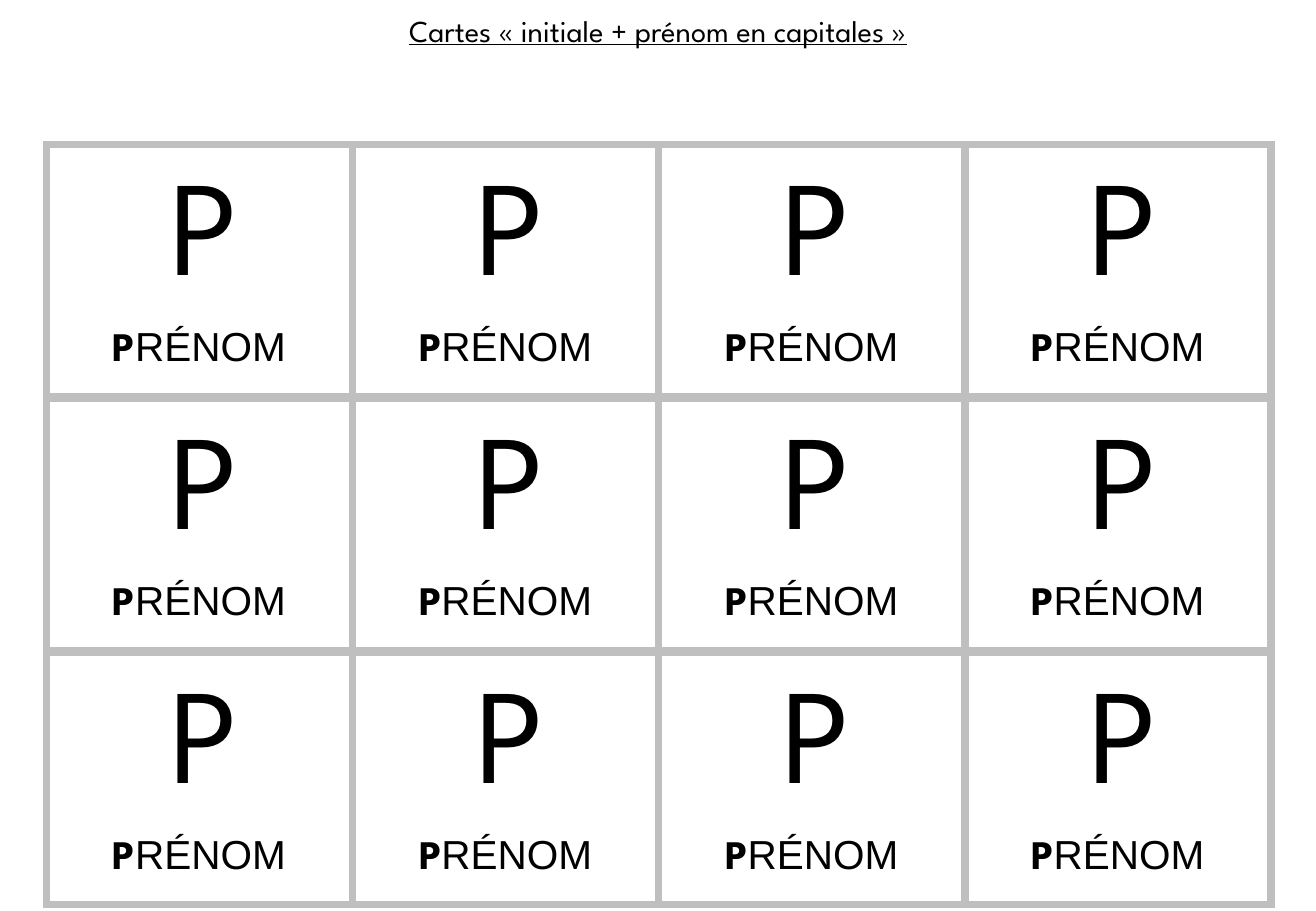
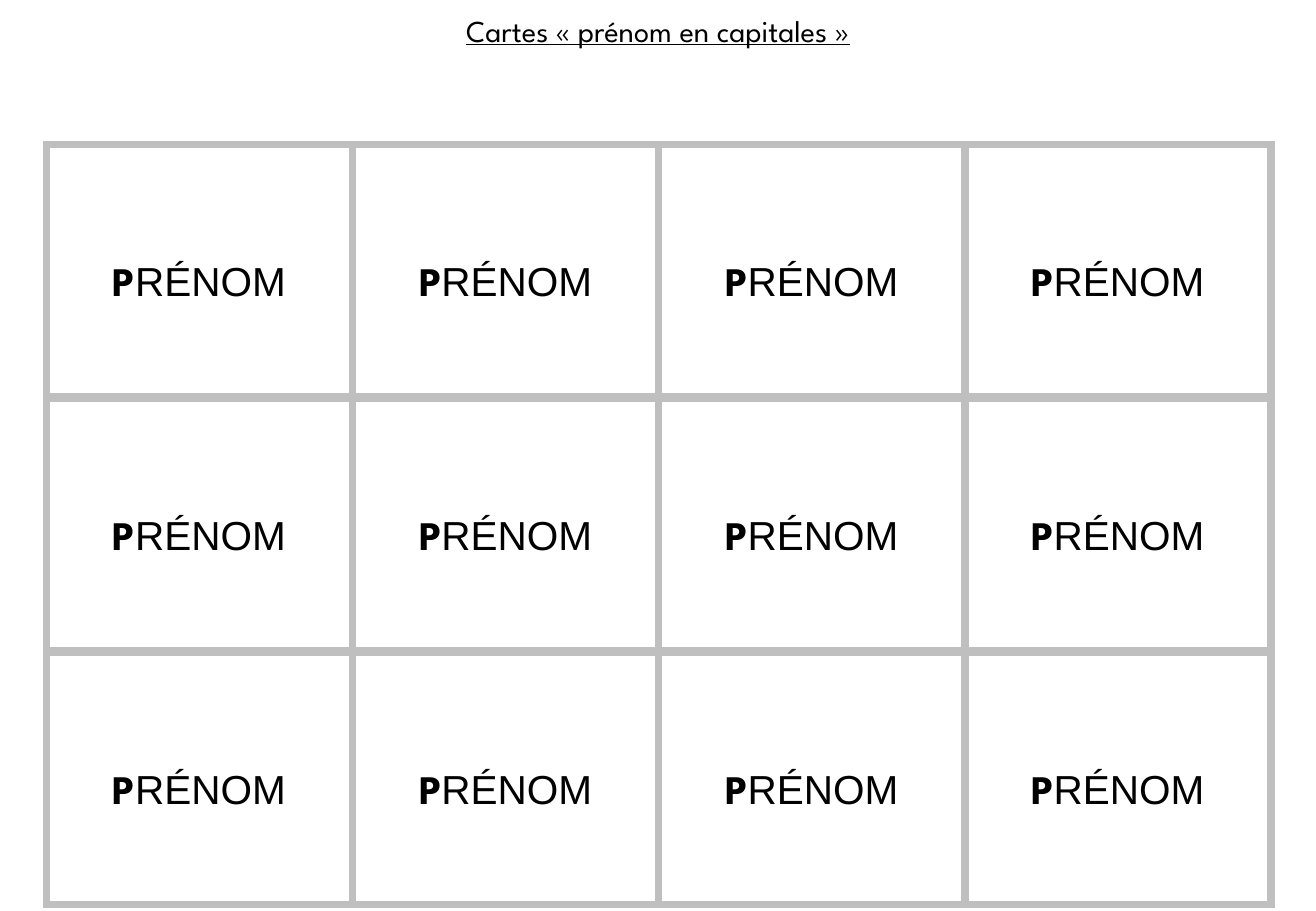
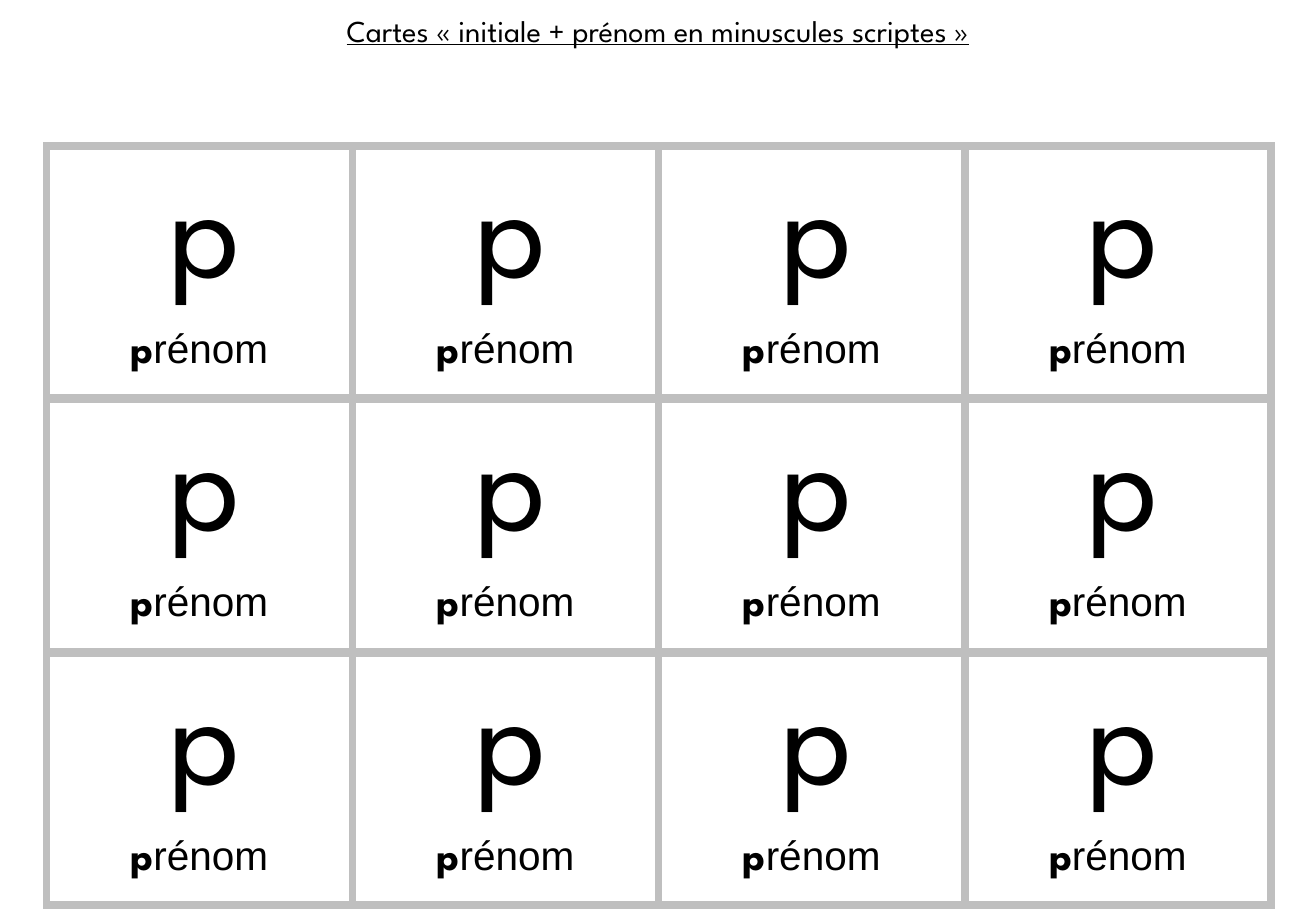
from itertools import product

from lxml import etree
from pptx import Presentation
from pptx.dml.color import RGBColor
from pptx.enum.shapes import MSO_SHAPE
from pptx.enum.text import MSO_ANCHOR, MSO_AUTO_SIZE, PP_ALIGN
from pptx.oxml.ns import qn
from pptx.util import Cm, Pt

RECTANGLE = MSO_SHAPE.RECTANGLE
TOP = MSO_ANCHOR.TOP
GROW = MSO_AUTO_SIZE.SHAPE_TO_FIT_TEXT
CENTER = PP_ALIGN.CENTER


def color(value):
    """Turn a hex string into a colour."""
    return RGBColor.from_string(value)


def add_span(para, text, *, font, size, bold=False, underline=False, ink="000000"):
    """Add a formatted run of text to a paragraph."""
    span = para.add_run()
    span.text = text
    span.font.name = font
    span.font.size = Pt(size)
    span.font.bold = bold
    span.font.underline = underline
    span.font.color.rgb = color(ink)


class CardDeck:
    """Hold the deck style and the current page of name cards."""

    WIDTH, HEIGHT = 27.51, 19.05
    COLUMNS, ROWS = 4, 3
    LEFT, CARD_WIDTH, CARD_HEIGHT = 0.97, 6.4, 5.28
    INITIAL_WIDTH, INITIAL_HEIGHT, INITIAL_RISE = 3, 3.68, 0.2
    DISPLAY_FONT, BODY_FONT = "League Spartan", "Arial"
    BORDER, BORDER_WIDTH = "BFBFBF", 4.5

    def __init__(self):
        """Create an empty deck."""
        self.deck = Presentation()
        self.deck.slide_width = Cm(self.WIDTH)
        self.deck.slide_height = Cm(self.HEIGHT)
        self.page = None

    def start_page(self, title):
        """Add a page and its underlined title."""
        self.page = self.deck.slides.add_slide(self.deck.slide_layouts[5])
        box = self.page.shapes.title
        box.left, box.top, box.width, box.height = Cm(0), Cm(0.13), Cm(self.WIDTH), Cm(1.03)
        para = self.format_frame(box)
        add_span(para, title, font=self.DISPLAY_FONT, size=18, underline=True)

    def format_frame(self, box):
        """Set up a text frame and return its centred paragraph."""
        frame = box.text_frame
        frame.word_wrap = True
        frame.auto_size = GROW
        frame.vertical_anchor = TOP
        para = frame.paragraphs[0]
        para.alignment = CENTER
        return para

    def add_text(self, left, top, width, height):
        """Add a text box and return its paragraph."""
        box = self.page.shapes.add_textbox(Cm(left), Cm(top), Cm(width), Cm(height))
        return self.format_frame(box)

    def add_frame(self, left, top):
        """Draw the square-cornered border of a card."""
        box = self.page.shapes.add_shape(
            RECTANGLE, Cm(left), Cm(top), Cm(self.CARD_WIDTH), Cm(self.CARD_HEIGHT))
        box.shadow.inherit = False
        box.fill.background()
        box.line.color.rgb = color(self.BORDER)
        box.line.width = Pt(self.BORDER_WIDTH)
        outline = box.element.spPr.find(qn("a:ln"))
        etree.SubElement(outline, qn("a:miter"), lim="800000")

    def add_initial(self, left, top, letter):
        """Add the large initial of a card."""
        indent = (self.CARD_WIDTH - self.INITIAL_WIDTH) / 2 + 0.1
        para = self.add_text(left + indent, top - self.INITIAL_RISE,
                             self.INITIAL_WIDTH, self.INITIAL_HEIGHT)
        add_span(para, letter, font=self.DISPLAY_FONT, size=80)

    def add_name(self, left, top, name, height):
        """Add a first name with a bold initial."""
        para = self.add_text(left, top, self.CARD_WIDTH, height)
        para.line_spacing = 1.5
        add_span(para, name[0], font=self.DISPLAY_FONT, size=24, bold=True)
        add_span(para, name[1:], font=self.BODY_FONT, size=24)

    def add_cards(self, name, *, top, pitch, name_offset, name_height, initial):
        """Fill the page with a grid of identical cards."""
        for row, column in product(range(self.ROWS), range(self.COLUMNS)):
            left = self.LEFT + column * self.CARD_WIDTH
            card_top = top + row * pitch
            self.add_frame(left, card_top)
            if initial:
                self.add_initial(left, card_top, name[0])
            self.add_name(left, card_top + name_offset, name, name_height)


def main():
    """Build and save the three pages of cards."""
    cards = CardDeck()
    capitals = {"top": 3.02, "pitch": 5.31, "name_height": 1.6}

    cards.start_page("Cartes « initiale + prénom en capitales »")
    cards.add_cards("PRÉNOM", name_offset=3.07, initial=True, **capitals)

    cards.start_page("Cartes « prénom en capitales »")
    cards.add_cards("PRÉNOM", name_offset=1.71, initial=False, **capitals)

    cards.start_page("Cartes « initiale + prénom en minuscules scriptes »")
    cards.add_cards("prénom", top=3.05, pitch=5.3, name_offset=3.07,
                    name_height=1.8, initial=True)

    cards.deck.save("out.pptx")


if __name__ == "__main__":
    main()
